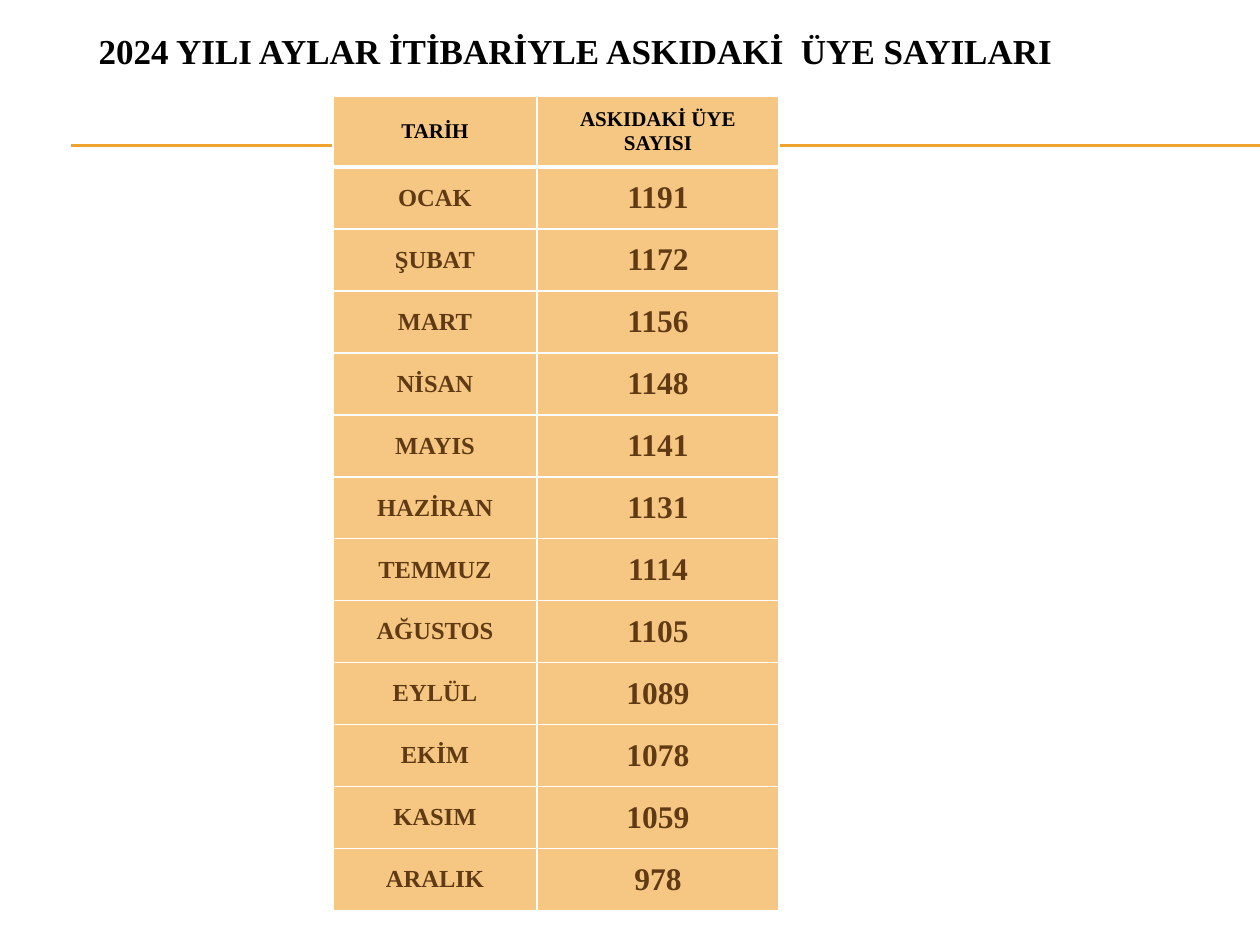
import lxml.etree
import pptx
import pptx.dml.color
import pptx.enum.shapes
import pptx.enum.text
import pptx.oxml.ns
import pptx.util

COLOURS = {
    "rule": "F0A22E",
    "cell": "F6C782",
    "border": "FFFFFF",
    "heading": "000000",
    "body": "603A14",
}
MONTHLY_MEMBERS = [
    ("OCAK", 1191), ("ŞUBAT", 1172), ("MART", 1156), ("NİSAN", 1148),
    ("MAYIS", 1141), ("HAZİRAN", 1131), ("TEMMUZ", 1114), ("AĞUSTOS", 1105),
    ("EYLÜL", 1089), ("EKİM", 1078), ("KASIM", 1059), ("ARALIK", 978),
]


def px(length):
    return pptx.util.Emu(round(length * 914400 / 126))


def rgb(name):
    return pptx.dml.color.RGBColor.from_string(COLOURS[name])


class SlideBuilder:
    """Holds the style and the current slide, and draws each kind of element."""

    font = "Times New Roman"

    def __init__(self, slide):
        self.slide = slide

    def add_text(self, frame, text, size, colour):
        paragraph = frame.paragraphs[0]
        paragraph.alignment = pptx.enum.text.PP_ALIGN.CENTER
        run = paragraph.add_run()
        run.text = text
        run.font.name = self.font
        run.font.size = pptx.util.Pt(size)
        run.font.bold = True
        run.font.color.rgb = rgb(colour)

    def title(self, text, left, top, width, height):
        heading = self.slide.shapes.add_textbox(px(left), px(top), px(width), px(height))
        heading.text_frame.word_wrap = True
        heading.text_frame.vertical_anchor = pptx.enum.text.MSO_ANCHOR.MIDDLE
        self.add_text(heading.text_frame, text, 20, "heading")

    def rule(self, left, right, y):
        rule = self.slide.shapes.add_connector(
            pptx.enum.shapes.MSO_CONNECTOR.STRAIGHT, px(left), px(y), px(right), px(y))
        rule.line.color.rgb = rgb("rule")
        rule.line.width = pptx.util.Pt(0.75)
        lxml.etree.SubElement(rule._element.spPr, pptx.oxml.ns.qn("a:effectLst"))

    def border(self, cell, side, points):
        properties = cell._tc.get_or_add_tcPr()
        edge = lxml.etree.SubElement(
            properties, pptx.oxml.ns.qn(f"a:ln{side}"), w=str(pptx.util.Pt(points)))
        fill = lxml.etree.SubElement(edge, pptx.oxml.ns.qn("a:solidFill"))
        lxml.etree.SubElement(fill, pptx.oxml.ns.qn("a:srgbClr"), val=COLOURS["border"])

    def table(self, rows, left, top, widths, heights):
        grid = self.slide.shapes.add_table(
            len(rows), len(widths), px(left), px(top), px(sum(widths)), px(sum(heights))).table
        for column, width in zip(grid.columns, widths):
            column.width = px(width)
        for row, height in zip(grid.rows, heights):
            row.height = px(height)
        for r, values in enumerate(rows):
            sizes = (14, 18) if r else (12, 12)
            edges = {"L": 1, "R": 1, "T": 3 if r == 1 else 1, "B": 1 if r else 3}
            for c, value in enumerate(values):
                cell = grid.cell(r, c)
                for side, points in edges.items():
                    self.border(cell, side, points)
                cell.fill.solid()
                cell.fill.fore_color.rgb = rgb("cell")
                cell.vertical_anchor = pptx.enum.text.MSO_ANCHOR.MIDDLE
                self.add_text(cell.text_frame, str(value), sizes[c], "body" if r else "heading")


def main():
    deck = pptx.Presentation()
    deck.slide_width, deck.slide_height = px(1260), px(945)
    builder = SlideBuilder(deck.slides.add_slide(deck.slide_layouts[6]))
    for y in (145, 146):
        builder.rule(71, 1260, y)
    builder.table(
        [("TARİH", "ASKIDAKİ ÜYE SAYISI"), *MONTHLY_MEMBERS],
        333, 96, [204, 242], [71] + [62] * len(MONTHLY_MEMBERS))
    builder.title("2024 YILI AYLAR İTİBARİYLE ASKIDAKİ  ÜYE SAYILARI", 35, 6, 1081, 90)
    deck.save("out.pptx")


if __name__ == "__main__":
    main()
